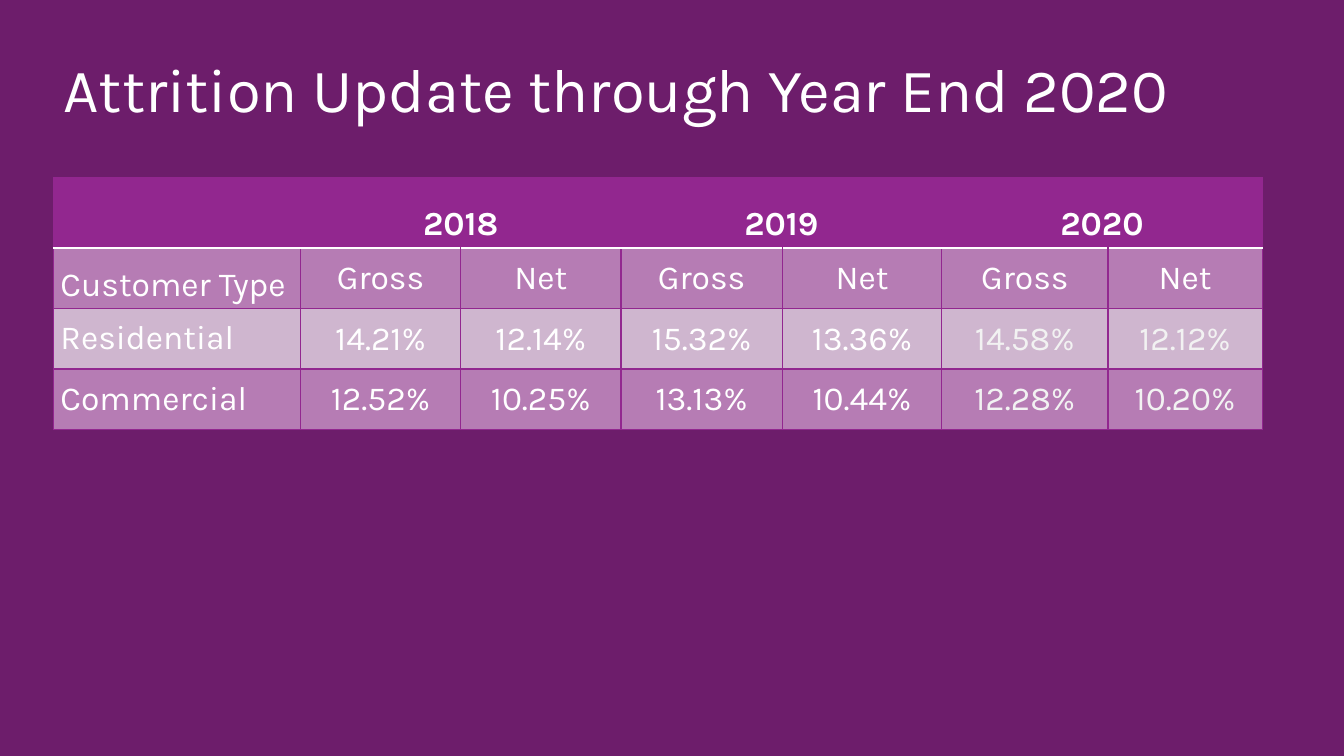
from dataclasses import dataclass

from lxml import etree
from pptx import Presentation
from pptx.dml.color import RGBColor
from pptx.enum import text
from pptx.oxml import ns
from pptx.util import Inches, Pt


@dataclass(frozen=True)
class Theme:
    font: str = "Karla"
    title_size: int = 44
    table_size: int = 24
    background: str = "6D1D6B"
    accent: str = "92278F"
    dark_band: str = "B67CB4"
    light_band: str = "CFB6CF"
    white: str = "FFFFFF"
    soft_white: str = "F2F2F2"


@dataclass(frozen=True)
class RowStyle:
    height: float
    fill: str
    bold: bool = False
    value_anchor: text.MSO_ANCHOR = text.MSO_ANCHOR.MIDDLE
    label_anchor: text.MSO_ANCHOR = text.MSO_ANCHOR.MIDDLE
    value_insets: tuple = (0.08, 0.04, 0.08, 0.04)


THEME = Theme()
LABEL_INSETS = (0.07, 0.04, 0.07, 0.04)
TIGHT_INSETS = (0.01, 0.01, 0.01, 0)
BOTTOM = text.MSO_ANCHOR.BOTTOM

COLUMN_WIDTHS = [2.45, 1.59, 1.59, 1.6, 1.58, 1.65, 1.53]
ROW_STYLES = [
    RowStyle(0.7, THEME.accent, bold=True, value_anchor=BOTTOM),
    RowStyle(0.6, THEME.dark_band, label_anchor=BOTTOM),
    RowStyle(0.6, THEME.light_band, value_insets=TIGHT_INSETS),
    RowStyle(0.6, THEME.dark_band, value_insets=TIGHT_INSETS),
]
ROWS = [
    ["", "2018", "", "2019", "", "2020", ""],
    ["Customer Type"] + ["Gross", "Net"] * 3,
    ["Residential", "14.21%", "12.14%", "15.32%", "13.36%", "14.58%", "12.12%"],
    ["Commercial", "12.52%", "10.25%", "13.13%", "10.44%", "12.28%", "10.20%"],
]
FIRST_VALUE_ROW = 2
LATEST_YEAR_COLUMN = 5


def style_font(font, size: int, color: str, bold: bool = False) -> None:
    font.name = THEME.font
    font.size = Pt(size)
    font.bold = bold
    font.color.rgb = RGBColor.from_string(color)


def set_border(cell, side: str, color: str, width: float) -> None:
    line = etree.Element(ns.qn(f"a:ln{side}"), w=str(Pt(width)))
    fill = etree.SubElement(line, ns.qn("a:solidFill"))
    etree.SubElement(fill, ns.qn("a:srgbClr"), val=color)
    # Borders come before the fill, in the order L, R, T, B
    cell_props = cell._tc.get_or_add_tcPr()
    cell_props.insert("LRTB".index(side), line)


def draw_cell(cell, row: int, column: int) -> None:
    style = ROW_STYLES[row]
    is_label = column == 0
    cell.fill.solid()
    cell.fill.fore_color.rgb = RGBColor.from_string(style.fill)
    insets = LABEL_INSETS if is_label else style.value_insets
    (cell.margin_left, cell.margin_top,
     cell.margin_right, cell.margin_bottom) = map(Inches, insets)
    cell.vertical_anchor = style.label_anchor if is_label else style.value_anchor

    # White rule between the year header and the body
    for side in "LRTB":
        is_rule = (row, side) in ((0, "B"), (1, "T"))
        set_border(cell, side, THEME.white if is_rule else THEME.accent,
                   1.5 if is_rule else 1)

    if ROWS[row][column]:
        p = cell.text_frame.paragraphs[0]
        p.text = ROWS[row][column]
        p.alignment = text.PP_ALIGN.LEFT if is_label else text.PP_ALIGN.CENTER
        latest = row >= FIRST_VALUE_ROW and column >= LATEST_YEAR_COLUMN
        color = THEME.soft_white if latest else THEME.white
        style_font(p.runs[0].font, THEME.table_size, color, style.bold)


def draw_title(slide, title: str) -> None:
    sp = slide.shapes.title
    sp.left, sp.top = Inches(0.53), Inches(0.4)
    sp.width, sp.height = Inches(12.26), Inches(0.56)
    tf = sp.text_frame
    tf.text = title
    tf.word_wrap = True
    tf.auto_size = text.MSO_AUTO_SIZE.NONE
    tf.vertical_anchor = text.MSO_ANCHOR.TOP
    tf.margin_top = Inches(0.11)
    p = tf.paragraphs[0]
    p.alignment = text.PP_ALIGN.LEFT
    style_font(p.runs[0].font, THEME.title_size, THEME.white)


def draw_table(slide) -> None:
    frame = slide.shapes.add_table(
        len(ROWS), len(COLUMN_WIDTHS), Inches(0.53), Inches(1.76),
        Inches(sum(COLUMN_WIDTHS)), Inches(sum(s.height for s in ROW_STYLES)))
    table = frame.table
    table.first_row = table.horz_banding = False
    for column, width in zip(table.columns, COLUMN_WIDTHS):
        column.width = Inches(width)
    for row, style in zip(table.rows, ROW_STYLES):
        row.height = Inches(style.height)
    for row in range(len(ROWS)):
        for column in range(len(COLUMN_WIDTHS)):
            draw_cell(table.cell(row, column), row, column)

    # Each year spans its Gross and Net columns
    for column in range(1, len(COLUMN_WIDTHS), 2):
        table.cell(0, column).merge(table.cell(0, column + 1))


def main() -> None:
    prs = Presentation()
    prs.slide_width, prs.slide_height = Inches(13.33), Inches(7.5)
    slide = prs.slides.add_slide(prs.slide_layouts.get_by_name("Title Only"))
    background = slide.background.fill
    background.solid()
    background.fore_color.rgb = RGBColor.from_string(THEME.background)
    draw_title(slide, "Attrition Update through Year End 2020")
    draw_table(slide)
    prs.save("out.pptx")


if __name__ == "__main__":
    main()
